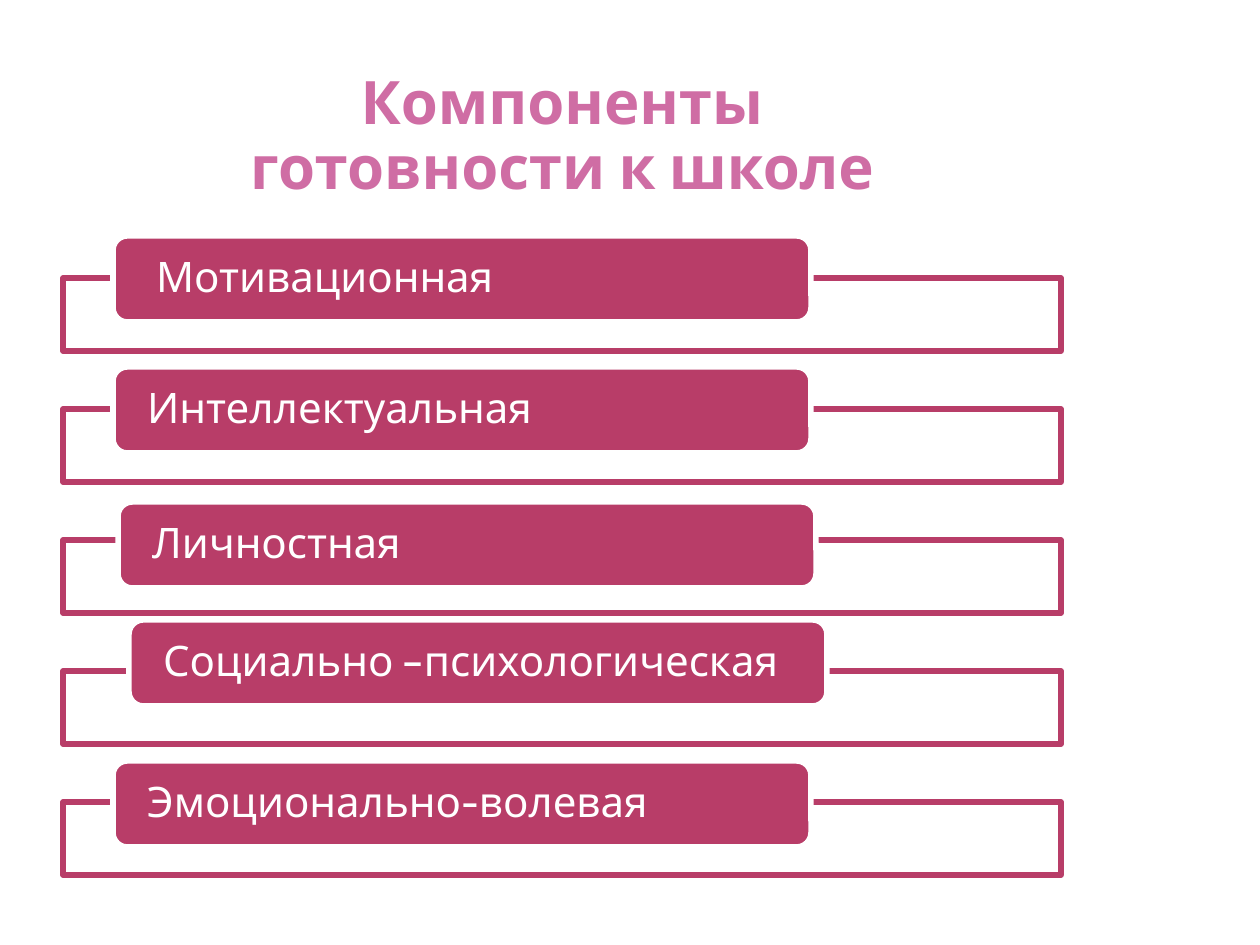
from pptx import Presentation
from pptx.dml.color import RGBColor
from pptx.enum.shapes import MSO_SHAPE as SHAPE
from pptx.enum.text import MSO_ANCHOR as ANCHOR, MSO_AUTO_SIZE as AUTO, PP_ALIGN as ALIGN
from pptx.util import Pt

PX = 914400 / 126
COLORS = {"title": "CF6DA4", "berry": "B83D68", "white": "FFFFFF"}


def px(*values):
    return [round(v * PX) for v in values]


def style_text(sp, text, color, frame, para, font):
    tf = sp.text_frame
    tf.text = text
    p = tf.paragraphs[0]
    for target, values in ((tf, frame), (p, para), (p.runs[0].font, font)):
        for name, value in values.items():
            setattr(target, name, value)
    for r in p.runs:
        for name, value in font.items():
            setattr(r.font, name, value)
        r.font.color.rgb = RGBColor.from_string(COLORS[color])


prs = Presentation()
prs.slide_width, prs.slide_height = px(1260, 945)
s = prs.slides.add_slide(prs.slide_layouts[5])

title = s.shapes.title
title.left, title.top, title.width, title.height = px(63, 44, 998, 158)
inset = px(6)[0]
style_text(
    title, "Компоненты\vготовности к школе", "title",
    {"margin_left": inset, "margin_right": inset, "margin_top": 0, "margin_bottom": 0,
     "vertical_anchor": ANCHOR.BOTTOM, "word_wrap": True, "auto_size": AUTO.NONE},
    {"alignment": ALIGN.CENTER, "line_spacing": 0.9},
    {"name": "Cabin", "size": Pt(34.2), "bold": True},
)

components = [
    ("Мотивационная", 113, 236, 39),
    ("Интеллектуальная", 113, 367, 30),
    ("Личностная", 118, 502, 30),
    ("Социально –психологическая", 129, 620, 30),
    ("Эмоционально-волевая", 113, 761, 30),
]

for i, (text, left, top, indent) in enumerate(components):
    frame = s.shapes.add_shape(SHAPE.RECTANGLE, *px(63, 278 + 131 * i, 998, 73))
    label = s.shapes.add_shape(SHAPE.ROUNDED_RECTANGLE, *px(left, top, 698, 86))
    for sp, fill, line in ((frame, "white", "berry"), (label, "berry", "white")):
        sp.shadow.inherit = False
        sp.fill.solid()
        sp.fill.fore_color.rgb = RGBColor.from_string(COLORS[fill])
        sp.line.color.rgb = RGBColor.from_string(COLORS[line])
        sp.line.width = Pt(3.15)
    style_text(
        label, text, "white",
        {"margin_left": px(indent)[0], "margin_right": px(30)[0], "margin_top": 0,
         "margin_bottom": 0, "vertical_anchor": ANCHOR.MIDDLE, "word_wrap": True},
        {"alignment": ALIGN.LEFT, "line_spacing": 0.9},
        {"name": "Cabin", "size": Pt(24)},
    )

prs.save("out.pptx")
